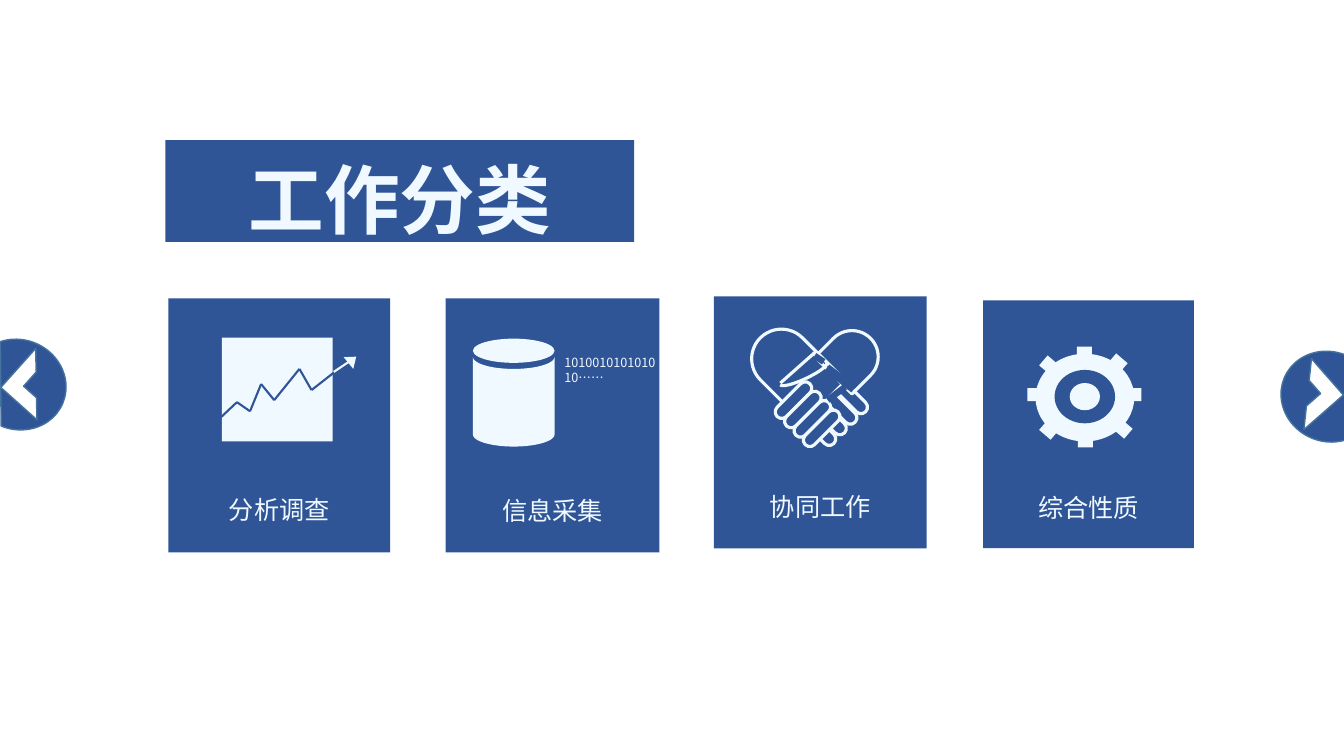
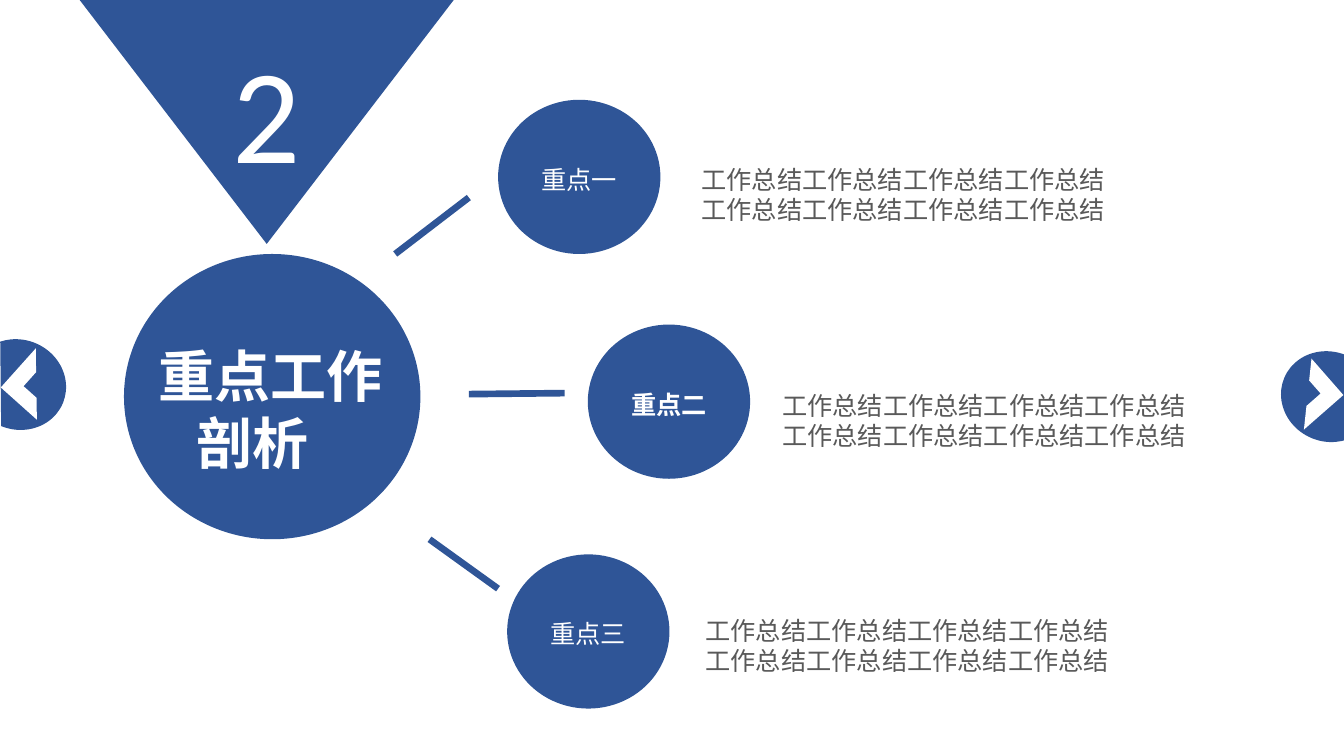
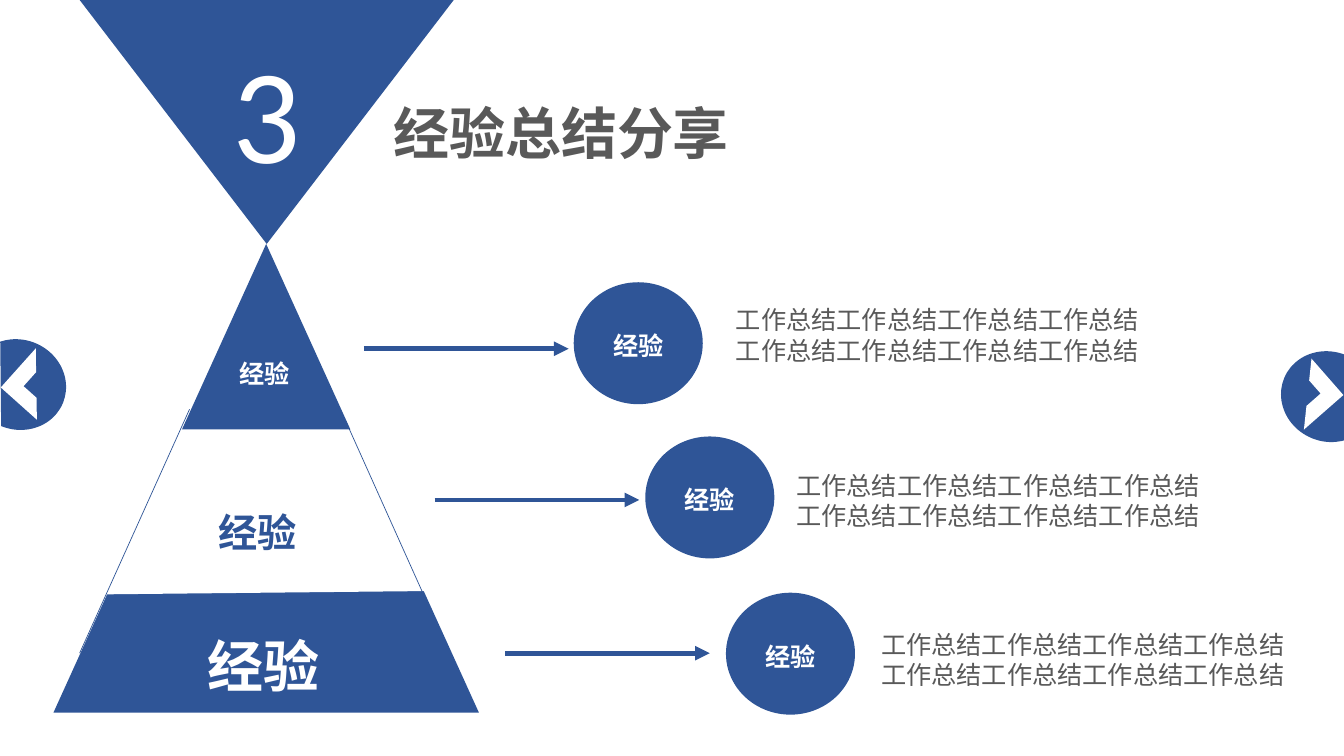
import dataclasses
import itertools
import math

import pptx
import pptx.dml.color
import pptx.enum.shapes
import pptx.enum.text
import pptx.oxml
import pptx.oxml.ns
import pptx.util

EMU_PER_PX = 9144  # 100 px to the inch
SHAPE = pptx.enum.shapes.MSO_SHAPE
ALIGN = pptx.enum.text.PP_ALIGN
ANCHOR = pptx.enum.text.MSO_ANCHOR


@dataclasses.dataclass(frozen=True)
class Theme:
    blue: str = "2F5597"
    ice: str = "EFF9FF"
    white: str = "FFFFFF"
    gray: str = "595959"
    edge: str = "43739E"
    font: str = "Noto Sans CJK SC"
    number_font: str = "Calibri"
    banner: int = 54
    number: int = 96
    title: int = 40
    subtitle: int = 28
    body: int = 18
    small: int = 9
    line_height: float = 1.2


THEME = Theme()
BODY_LINES = "\n".join(["工作总结" * 4] * 2)


def px(value):
    return pptx.util.Emu(round(value * EMU_PER_PX))


def rgb(color):
    return pptx.dml.color.RGBColor.from_string(color)


def paint(shape, fill=None, line=None, width=1):
    shape.shadow.inherit = False
    if fill:
        shape.fill.solid()
        shape.fill.fore_color.rgb = rgb(fill)
    else:
        shape.fill.background()
    if line:
        shape.line.color.rgb = rgb(line)
        shape.line.width = pptx.util.Pt(width)
    else:
        shape.line.fill.background()


def add_figure(slide, kind, box, fill=None, line=None, width=1, rotation=0, adjust=()):
    shape = slide.shapes.add_shape(kind, *map(px, box))
    for index, value in enumerate(adjust):
        shape.adjustments[index] = value
    shape.rotation = rotation
    paint(shape, fill, line, width)
    return shape


def centered(center, width, height):
    """Box of the given size around a centre point."""
    return center[0] - width / 2, center[1] - height / 2, width, height


def add_outline(slide, points, fill):
    corners = [(px(x), px(y)) for x, y in points]
    builder = slide.shapes.build_freeform(*corners[0], scale=1.0)
    builder.add_line_segments(corners[1:], close=True)
    paint(builder.convert_to_shape(), fill)


def add_line(slide, start, end, color, width, arrow=False):
    connector = slide.shapes.add_connector(
        pptx.enum.shapes.MSO_CONNECTOR.STRAIGHT, *map(px, (*start, *end)))
    connector.line.color.rgb = rgb(color)
    connector.line.width = pptx.util.Pt(width)
    if arrow:
        tail = pptx.oxml.parse_xml(
            '<a:tailEnd %s type="triangle"/>' % pptx.oxml.ns.nsdecls("a"))
        connector.line._get_or_add_ln().append(tail)
    effects = pptx.oxml.parse_xml("<a:effectLst %s/>" % pptx.oxml.ns.nsdecls("a"))
    connector._element.spPr.append(effects)


def set_text(shape, text, size, color, bold=False, align=ALIGN.LEFT,
             anchor=ANCHOR.TOP, wrap=True, font=THEME.font):
    frame = shape.text_frame
    frame.text = text
    frame.word_wrap = wrap
    frame.auto_size = pptx.enum.text.MSO_AUTO_SIZE.NONE
    frame.vertical_anchor = anchor
    frame.margin_left = frame.margin_right = px(10)
    frame.margin_bottom = px(5)
    # Exact spacing trims the ascent, so the inset gives the trimmed part back.
    lift = 0 if font == THEME.number_font else size * 0.125
    frame.margin_top = px(5 + lift * (2 if anchor == ANCHOR.MIDDLE else 1))
    for paragraph in frame.paragraphs:
        paragraph.alignment = align
        if font == THEME.font:
            paragraph.line_spacing = pptx.util.Pt(size * THEME.line_height)
        for run in paragraph.runs:
            run.font.size = pptx.util.Pt(size)
            run.font.bold = bold
            run.font.name = font
            run.font.color.rgb = rgb(color)
            east_asian = pptx.oxml.parse_xml(
                '<a:ea %s typeface="%s"/>' % (pptx.oxml.ns.nsdecls("a"), font))
            run.font._element.find(pptx.oxml.ns.qn("a:latin")).addnext(east_asian)


def add_text(slide, box, text, size, color, **style):
    set_text(slide.shapes.add_textbox(*map(px, box)), text, size, color, **style)


def add_body(slide, left, top):
    add_text(slide, (left, top, 450, 80), BODY_LINES, THEME.body, THEME.gray)


def add_circle(slide, box, text, bold=True):
    circle = add_figure(slide, SHAPE.OVAL, box, THEME.blue)
    set_text(circle, text, THEME.body, THEME.white, bold=bold,
             align=ALIGN.CENTER, anchor=ANCHOR.MIDDLE)


def place_title(slide, box, text, size, color, **style):
    """Format the title placeholder and bring it in front of earlier shapes."""
    title = slide.shapes.title
    title.left, title.top, title.width, title.height = map(px, box)
    set_text(title, text, size, color, bold=True, **style)
    title.element.getparent().append(title.element)
    return title


def add_slide(presentation, edge=None):
    """Title-only slide with a page-turn button at each side."""
    slide = presentation.slides.add_slide(presentation.slide_layouts[5])
    for left, top, rotation in ((1270, 349, 23.3), (-30, 337, 202.3)):
        add_figure(slide, SHAPE.CHORD, (left, top, 96, 89), THEME.blue, edge,
                   rotation=rotation)
    for left, top, rotation in ((1271, 367, 138.8), (10, 357, 311.8)):
        add_figure(slide, SHAPE.HALF_FRAME, (left, top, 52, 48), THEME.white, edge,
                   rotation=rotation)
    return slide


def add_number_flag(slide, number):
    add_figure(slide, SHAPE.ISOSCELES_TRIANGLE, (79, 0, 371, 242), THEME.blue, rotation=180)
    add_text(slide, (220, 24, 88, 172), number, THEME.number, THEME.white,
             align=ALIGN.CENTER, wrap=False, font=THEME.number_font)


def draw_chart_icon(slide):
    add_figure(slide, SHAPE.RECTANGLE, (220, 335, 110, 103), THEME.ice)
    trend = [(217, 416), (235, 399), (248, 408), (259, 381),
             (272, 397), (297, 366), (309, 387), (332, 369)]
    for start, end in itertools.pairwise(trend):
        add_line(slide, start, end, THEME.blue, 1.5)
    add_line(slide, (331, 369), (349, 357), THEME.ice, 1.5)
    add_figure(slide, SHAPE.ISOSCELES_TRIANGLE, (342, 352, 15, 10), THEME.ice, rotation=50.8)


def draw_database_icon(slide):
    add_figure(slide, SHAPE.OVAL, (469, 336, 81, 24), THEME.ice)
    angles = [math.radians(degrees) for degrees in range(0, 181, 6)]

    def rim(level):
        return [(509.5 + 40.5 * math.cos(a), level + 12 * math.sin(a)) for a in angles]

    add_outline(slide, rim(354) + rim(431)[::-1], THEME.ice)
    add_text(slide, (550, 346, 113, 85), "101001010101010……", THEME.small, THEME.ice)


def draw_handshake_icon(slide):
    pen = {"line": THEME.ice, "width": 2.25}
    sleeve = SHAPE.ROUND_2_SAME_RECTANGLE
    for step in range(4):
        center = (815 + 10.5 * step, 428 - 10.5 * step)
        add_figure(slide, sleeve, centered(center, 13, 34), rotation=135,
                   adjust=(0.5, 0), **pen)
    add_figure(slide, sleeve, centered((786, 367), 59, 90), rotation=315,
               adjust=(0.5, 0), **pen)
    for step in range(4):
        center = (787 + 9.3 * step, 397 + 9.3 * step)
        add_figure(slide, SHAPE.ROUNDED_RECTANGLE, centered(center, 13, 46), THEME.blue,
                   rotation=45, adjust=(0.5,), **pen)
    add_figure(slide, sleeve, centered((845, 354), 52, 52), rotation=45,
               adjust=(0.5, 0), **pen)
    add_line(slide, (809, 349), (774, 380), THEME.ice, 2.25)
    add_figure(slide, SHAPE.ARC, centered((797, 371), 51, 10), rotation=335,
               adjust=(0, 108), **pen)
    for start, end, width in (((821, 397), (838, 384), 4.5),
                              ((820, 365), (847, 386), 6),
                              ((808, 353), (817, 359), 4.5)):
        add_line(slide, start, end, THEME.blue, width)


def draw_gear_icon(slide):
    for box, color in (((1027, 351, 98, 87), THEME.ice),
                       ((1046, 367, 60, 53), THEME.blue),
                       ((1061, 380, 30, 27), THEME.ice)):
        add_figure(slide, SHAPE.OVAL, box, color)
    straight = [(1068, 344), (1069, 431), (1117, 385), (1019, 385)]
    slanted = [(1106, 419), (1033, 356), (1101, 354), (1033, 420)]
    for teeth, rotation in ((straight, 0), (slanted, 40.6)):
        for left, top in teeth:
            add_figure(slide, SHAPE.RECTANGLE, (left, top, 15, 13), THEME.ice,
                       rotation=rotation)


def build_categories(presentation):
    slide = add_slide(presentation, THEME.edge)
    cards = [
        ((167, 296, 220, 252), "分析调查", 483, draw_chart_icon),
        ((442, 296, 212, 252), "信息采集", 484, draw_database_icon),
        ((708, 294, 211, 250), "协同工作", 480, draw_handshake_icon),
        ((975, 298, 209, 246), "综合性质", 481, draw_gear_icon),
    ]
    for box, label, label_top, draw_icon in cards:
        add_figure(slide, SHAPE.RECTANGLE, box, THEME.blue)
        add_text(slide, (box[0], label_top, box[2], 45), label, THEME.body, THEME.ice,
                 align=ALIGN.CENTER)
        draw_icon(slide)
    title = place_title(slide, (164, 139, 465, 101), "工作分类", THEME.banner, THEME.ice,
                        align=ALIGN.CENTER, anchor=ANCHOR.MIDDLE)
    title.fill.solid()
    title.fill.fore_color.rgb = rgb(THEME.blue)


def build_key_work(presentation):
    slide = add_slide(presentation)
    add_number_flag(slide, "2")
    add_figure(slide, SHAPE.OVAL, (123, 252, 294, 283), THEME.blue)
    title = place_title(slide, (147, 329, 245, 175), "重点工作\n剖析", THEME.title, THEME.white)
    properties = title.text_frame.paragraphs[1]._p.get_or_add_pPr()
    properties.set("marL", str(px(38)))
    properties.set("indent", "0")
    points = [
        ("重点一", False, (494, 99), (686, 156), (392, 252), (465, 196)),
        ("重点二", True, (583, 322), (766, 380), (465, 391), (560, 390)),
        ("重点三", False, (503, 550), (690, 603), (426, 535), (494, 584)),
    ]
    for label, bold, corner, body_corner, start, end in points:
        add_line(slide, start, end, THEME.blue, 4.75)
        add_circle(slide, (*corner, 161, 153), label, bold)
        add_body(slide, *body_corner)


def build_experience(presentation):
    slide = add_slide(presentation)
    add_number_flag(slide, "3")
    place_title(slide, (380, 88, 357, 108), "经验总结分享", THEME.title, THEME.gray)
    add_figure(slide, SHAPE.ISOSCELES_TRIANGLE, (53, 242, 422, 465), THEME.blue)
    add_outline(slide, [(71, 590), (158, 426), (380, 426), (464, 586)], THEME.white)
    add_line(slide, (343, 418), (430, 612), THEME.blue, 0.5)
    add_line(slide, (188, 406), (79, 648), THEME.blue, 0.5)
    levels = [
        ((227, 348, 71, 71), THEME.body, THEME.white),
        ((206, 496, 99, 88), THEME.subtitle, THEME.blue),
        ((195, 617, 132, 77), THEME.title, THEME.white),
    ]
    for box, size, color in levels:
        add_text(slide, box, "经验", size, color, bold=True, align=ALIGN.CENTER, wrap=False)
    rows = [
        ((361, 346), (569, 280), (720, 295)),
        ((431, 496), (640, 433), (780, 459)),
        ((501, 648), (720, 588), (864, 617)),
    ]
    for start, corner, body_corner in rows:
        add_line(slide, start, (start[0] + 203, start[1]), THEME.blue, 3.5, arrow=True)
        add_circle(slide, (*corner, 128, 121), "经验")
        add_body(slide, *body_corner)


def main():
    presentation = pptx.Presentation()
    presentation.slide_width = px(1333)
    presentation.slide_height = px(750)
    build_categories(presentation)
    build_key_work(presentation)
    build_experience(presentation)
    presentation.save("out.pptx")


if __name__ == "__main__":
    main()
